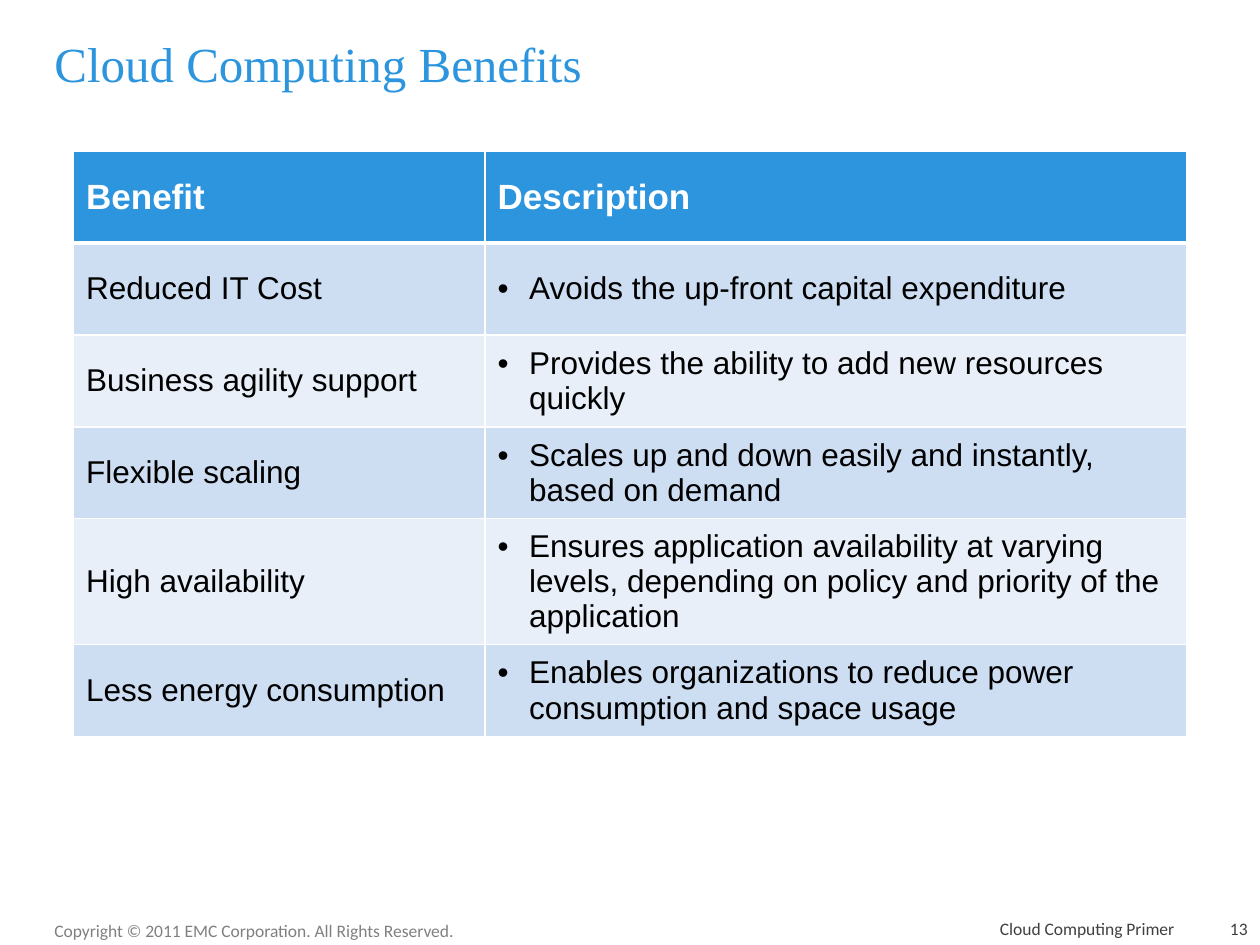
from lxml.etree import SubElement
from pptx import Presentation
from pptx.dml.color import RGBColor
from pptx.enum.text import MSO_ANCHOR, PP_ALIGN
from pptx.oxml.ns import qn
from pptx.util import Inches, Pt

WHITE = RGBColor(0xFF, 0xFF, 0xFF)
BLACK = RGBColor(0x00, 0x00, 0x00)
BLUE = RGBColor(0x2C, 0x95, 0xDD)
BAND_DARK = RGBColor(0xCD, 0xDD, 0xF2)
BAND_LIGHT = RGBColor(0xE8, 0xEF, 0xF9)
GREY = RGBColor(0x80, 0x80, 0x80)
DARK_GREY = RGBColor(0x40, 0x40, 0x40)

COLS, ROWS = 120, 90  # grid units across and down the slide

BENEFITS = [
    ("Benefit", "Description"),
    ("Reduced IT Cost", "Avoids the up-front capital expenditure"),
    ("Business agility support", "Provides the ability to add new resources quickly"),
    ("Flexible scaling", "Scales up and down easily and instantly, based on demand"),
    ("High availability", "Ensures application availability at varying levels, "
                          "depending on policy and priority of the application"),
    ("Less energy consumption", "Enables organizations to reduce power "
                                "consumption and space usage"),
]


def write_text(tf, text, font="Arial", size=18, color=BLACK, bold=False,
               align=PP_ALIGN.LEFT, bullet=False):
    p = tf.paragraphs[0]
    p.alignment = align
    if bullet:
        pPr = p._p.get_or_add_pPr()
        pPr.set("marL", str(Inches(0.25)))
        pPr.set("indent", str(-Inches(0.25)))
        SubElement(pPr, qn("a:buFont"), typeface="Arial")
        SubElement(pPr, qn("a:buChar"), char="•")
    r = p.add_run()
    r.text = text
    r.font.name, r.font.size, r.font.bold = font, Pt(size), bold
    r.font.color.rgb = color


def set_borders(cell, bottom):
    """Draw white cell borders, 1 pt wide except for the bottom one."""
    tcPr = cell._tc.get_or_add_tcPr()
    for side, width in (("L", 1), ("R", 1), ("T", 1), ("B", bottom)):
        ln = SubElement(tcPr, qn(f"a:ln{side}"), w=str(Pt(width)))
        fill = SubElement(ln, qn("a:solidFill"))
        SubElement(fill, qn("a:srgbClr"), val=str(WHITE))


class SlideBuilder:
    """Holds the current slide and its grid; lengths are grid units."""

    def __init__(self, prs):
        self.s = prs.slides.add_slide(prs.slide_layouts[6])
        self.col = prs.slide_width / COLS
        self.row = prs.slide_height / ROWS

    def box(self, x, y, w, h):
        return (round(x * self.col), round(y * self.row),
                round(w * self.col), round(h * self.row))

    def text(self, text, x, y, w, h, anchor=MSO_ANCHOR.BOTTOM, **fmt):
        tf = self.s.shapes.add_textbox(*self.box(x, y, w, h)).text_frame
        tf.word_wrap = True
        tf.vertical_anchor = anchor
        write_text(tf, text, **fmt)

    def table(self, data, x, y, widths, row_height):
        frame = self.s.shapes.add_table(
            len(data), len(widths),
            *self.box(x, y, sum(widths), row_height * len(data)))
        table = frame.table
        for column, width in zip(table.columns, widths):
            column.width = round(width * self.col)
        for i, values in enumerate(data):
            header = i == 0
            band = BLUE if header else BAND_DARK if i % 2 else BAND_LIGHT
            for j, value in enumerate(values):
                cell = table.cell(i, j)
                set_borders(cell, bottom=3 if header else 1)
                cell.fill.solid()
                cell.fill.fore_color.rgb = band
                cell.vertical_anchor = MSO_ANCHOR.MIDDLE
                write_text(cell.text_frame, value, bold=header,
                           size=20 if header else 18,
                           color=WHITE if header else BLACK,
                           bullet=j == 1 and not header)


def main():
    prs = Presentation()
    prs.slide_width, prs.slide_height = Inches(10), Inches(7.5)
    slide = SlideBuilder(prs)

    slide.text("Cloud Computing Benefits", 4, 1, 111, 10, MSO_ANCHOR.MIDDLE,
               font="Times New Roman", size=28, color=BLUE)
    slide.table(BENEFITS, 7, 14.4, widths=(39.2, 66.8), row_height=8.75)

    footer = dict(font="Calibri", size=10)
    slide.text("Copyright © 2011 EMC Corporation. All Rights Reserved.",
               4, 87, 41, 3.2, MSO_ANCHOR.TOP, color=GREY, **footer)
    footer.update(color=DARK_GREY, align=PP_ALIGN.RIGHT)
    slide.text("Cloud Computing Primer", 58, 87, 55, 3, **footer)
    slide.text("13", 114, 87, 6, 3, **footer)

    prs.save("out.pptx")


if __name__ == "__main__":
    main()
